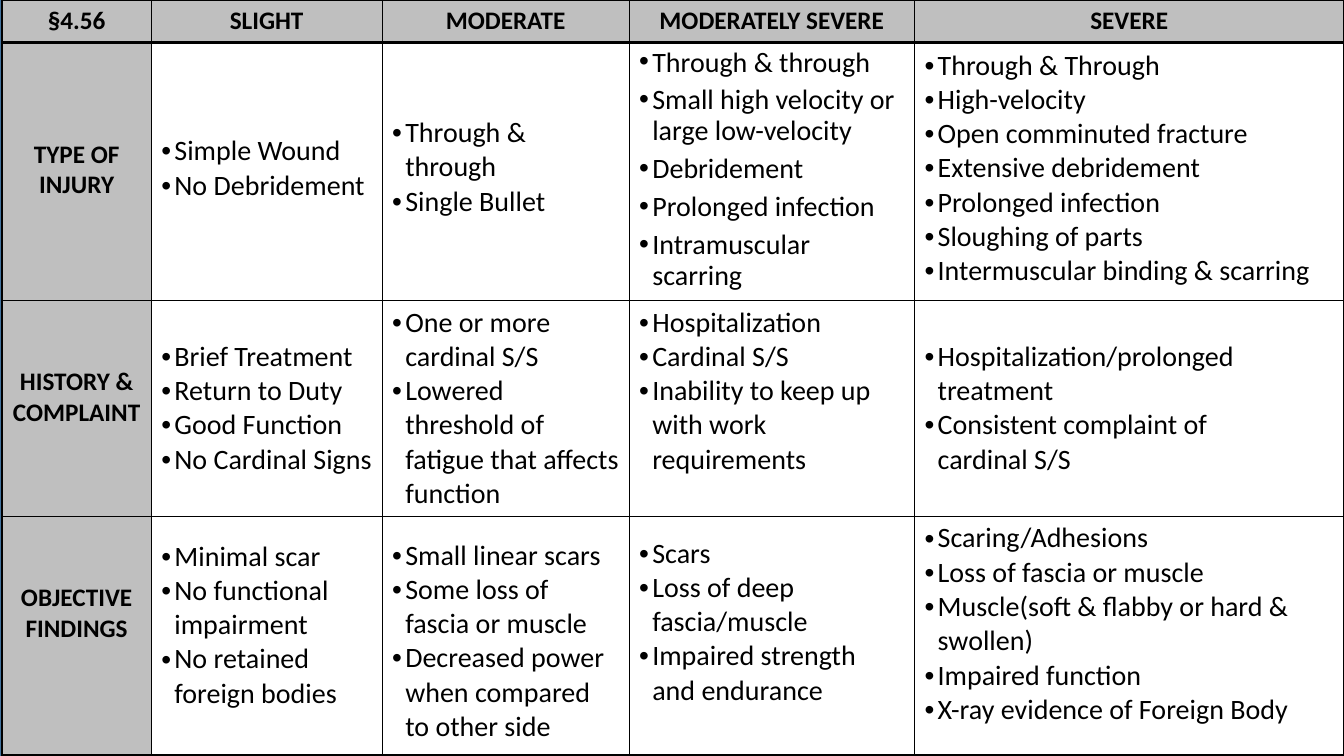
from lxml import etree
from pptx import Presentation
from pptx.dml.color import RGBColor
from pptx.enum.shapes import MSO_SHAPE
from pptx.enum.text import MSO_ANCHOR, PP_ALIGN
from pptx.oxml.ns import qn
from pptx.util import Inches, Pt

RECT = MSO_SHAPE.RECTANGLE
TOP, MIDDLE = MSO_ANCHOR.TOP, MSO_ANCHOR.MIDDLE
CENTER, LEFT = PP_ALIGN.CENTER, PP_ALIGN.LEFT

WIDTH, HEIGHT = 13.33, 7.5
FONT, BLACK, WHITE, GRAY, BLUE = "Calibri", "000000", "FFFFFF", "BFBFBF", "43739E"
COLS = [1.48, 2.29, 2.45, 2.83, 4.26]
ROWS = [0.42, 2.56, 2.14, 2.37]

HEADERS = ["§4.56", "SLIGHT", "MODERATE", "MODERATELY SEVERE", "SEVERE"]
# Each row: label with its top inset, then one (top inset, bullets) per severity
BODY = [
    (("TYPE OF INJURY", 0.96), [
        (0.91, ["Simple Wound", "No Debridement"]),
        (0.73, ["Through & through", "Single Bullet"]),
        (0.05, ["Through & through", "Small high velocity or large low-velocity",
                "Debridement", "Prolonged infection", "Intramuscular scarring"]),
        (0.06, ["Through & Through", "High-velocity", "Open comminuted fracture",
                "Extensive debridement", "Prolonged infection", "Sloughing of parts",
                "Intermuscular binding & scarring"]),
    ]),
    (("HISTORY & COMPLAINT", 0.66), [
        (0.39, ["Brief Treatment", "Return to Duty", "Good Function",
                "No Cardinal Signs"]),
        (0.05, ["One or more cardinal S/S",
                "Lowered threshold of fatigue that affects function"]),
        (0.05, ["Hospitalization", "Cardinal S/S",
                "Inability to keep up with work requirements"]),
        (0.39, ["Hospitalization/prolonged treatment",
                "Consistent complaint of\vcardinal S/S"]),
    ]),
    (("OBJECTIVE FINDINGS", 0.66), [
        (0.23, ["Minimal scar", "No functional impairment",
                "No retained foreign bodies"]),
        (0.22, ["Small linear scars", "Some loss of fascia or muscle",
                "Decreased power when compared to other side"]),
        (0.2, ["Scars", "Loss of deep fascia/muscle",
               "Impaired strength and endurance"]),
        (0.05, ["Scaring/Adhesions", "Loss of fascia or muscle",
                "Muscle(soft & flabby or hard & swollen)", "Impaired function",
                "X-ray evidence of Foreign Body"]),
    ]),
]
TIGHT_CELL = (1, 3)  # reduced line spacing, gaps between bullets


def rgb(value):
    return RGBColor.from_string(value)


def add_bullet(p, indent=0.13):
    pPr = p._p.get_or_add_pPr()
    pPr.set("marL", str(Inches(indent)))
    pPr.set("indent", str(-Inches(indent)))
    etree.SubElement(pPr, qn("a:buFont"), typeface="Arial")
    etree.SubElement(pPr, qn("a:buChar"), char="•")


def write(tf, lines, size=20, bold=False, align=LEFT, bullet=False, tight=False):
    for i, text in enumerate(lines):
        p = tf.add_paragraph() if i else tf.paragraphs[0]
        p.text = text
        p.alignment = align
        if tight:
            p.line_spacing = 0.9
            if i:
                p.space_before = Pt(5)
        if bullet:
            add_bullet(p)
        for r in p.runs:
            r.font.name, r.font.size, r.font.bold = FONT, Pt(size), bold
            r.font.color.rgb = rgb(BLACK)


def set_borders(cell, widths):
    """Draw black borders; widths maps side letter to points."""
    tcPr = cell._tc.get_or_add_tcPr()
    for i, (side, width) in enumerate(widths.items()):
        ln = etree.Element(qn("a:ln" + side), w=str(Pt(width)))
        fill = etree.SubElement(ln, qn("a:solidFill"))
        etree.SubElement(fill, qn("a:srgbClr"), val=BLACK)
        tcPr.insert(i, ln)


def fill_cell(cell, row, lines, color, top=0.05, anchor=TOP, **fmt):
    cell.fill.solid()
    cell.fill.fore_color.rgb = rgb(color)
    set_borders(cell, {"L": 1, "R": 1, "T": 2 if row == 1 else 1,
                       "B": 2 if row == 0 else 1})
    cell.margin_left = cell.margin_right = Inches(0.1)
    cell.margin_top, cell.margin_bottom = Inches(top), Inches(0.05)
    cell.vertical_anchor = anchor
    write(cell.text_frame, lines, **fmt)


def main():
    prs = Presentation()
    prs.slide_width, prs.slide_height = Inches(WIDTH), Inches(HEIGHT)
    s = prs.slides.add_slide(prs.slide_layouts[6])

    frame = s.shapes.add_shape(RECT, 0, 0, prs.slide_width, prs.slide_height)
    frame.shadow.inherit = False
    frame.fill.solid()
    frame.fill.fore_color.rgb = rgb(WHITE)
    frame.line.color.rgb = rgb(BLUE)
    frame.line.width = Pt(1)

    table = s.shapes.add_table(len(ROWS), len(COLS), Inches(0.02), 0,
                               Inches(sum(COLS)), Inches(sum(ROWS))).table
    for column, width in zip(table.columns, COLS):
        column.width = Inches(width)
    for row, height in zip(table.rows, ROWS):
        row.height = Inches(height)

    heading = dict(size=18, bold=True, align=CENTER)
    for c, text in enumerate(HEADERS):
        fill_cell(table.cell(0, c), 0, [text], GRAY, anchor=MIDDLE, **heading)
    for r, ((label, label_top), cells) in enumerate(BODY, 1):
        fill_cell(table.cell(r, 0), r, [label], GRAY, label_top, **heading)
        for c, (top, bullets) in enumerate(cells, 1):
            fill_cell(table.cell(r, c), r, bullets, WHITE, top, bullet=True,
                      tight=(r, c) == TIGHT_CELL)

    prs.save("out.pptx")


if __name__ == "__main__":
    main()
